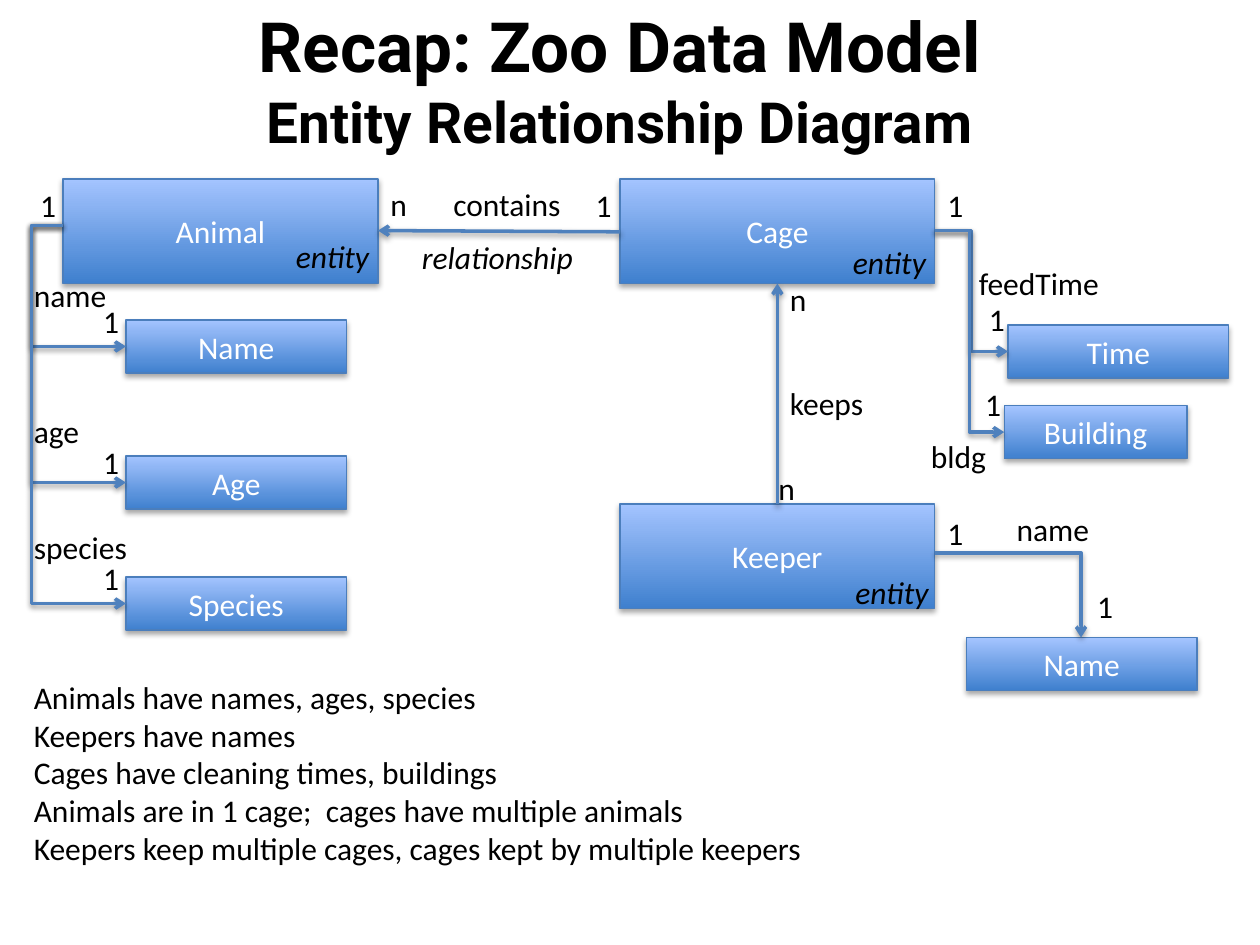
import pptx
import pptx.util
import pptx.dml.color
import pptx.enum.shapes
import pptx.enum.text
import pptx.oxml.ns
import lxml.etree

PX = 9144  # EMU per px, 100 px to the inch
BLACK, WHITE = "000000", "FFFFFF"
rgb = pptx.dml.color.RGBColor.from_string
qn = pptx.oxml.ns.qn


def add_shadow(effects, distance, opacity):
    """Put a soft downward shadow into an effect list."""
    shadow = lxml.etree.SubElement(effects, qn("a:outerShdw"), blurRad="40000",
                                   dist=str(distance), dir="5400000", rotWithShape="0")
    colour = lxml.etree.SubElement(shadow, qn("a:srgbClr"), val=BLACK)
    lxml.etree.SubElement(colour, qn("a:alpha"), val=str(opacity * 1000))


def set_text(shape, text, colour, size=18, font="Calibri", italic=False):
    """Write the text and format every run alike."""
    shape.text_frame.text = text
    for paragraph in shape.text_frame.paragraphs:
        for run in paragraph.runs:
            run.font.name = font
            run.font.size = pptx.util.Pt(size)
            run.font.italic = italic
            run.font.color.rgb = rgb(colour)


presentation = pptx.Presentation()
presentation.slide_width = 1000 * PX
presentation.slide_height = 750 * PX
slide = presentation.slides.add_slide(presentation.slide_layouts[6])
shapes = slide.shapes

# Title
title = shapes.add_textbox(42 * PX, 0, 900 * PX, 125 * PX)
title.text_frame.word_wrap = True
title.text_frame.vertical_anchor = pptx.enum.text.MSO_ANCHOR.MIDDLE
set_text(title, "Recap: Zoo Data Model\vEntity Relationship Diagram", BLACK, 39.6, "Roboto")
heading = title.text_frame.paragraphs[0]
heading.alignment = pptx.enum.text.PP_ALIGN.CENTER
for run in heading.runs:
    run.font.bold = True
heading.runs[1].font.size = pptx.util.Pt(32.4)

# Entity and attribute boxes: text, left, top, width, height
boxes = [
    ("Animal", 50, 142, 250, 83),
    ("Cage", 492, 142, 250, 83),
    ("Keeper", 492, 400, 250, 83),
    ("Name", 100, 254, 175, 42),
    ("Age", 100, 362, 175, 42),
    ("Species", 100, 458, 175, 42),
    ("Time", 800, 258, 175, 42),
    ("Building", 797, 322, 145, 42),
    ("Name", 767, 506, 183, 42),
]
for text, left, top, width, height in boxes:
    box = shapes.add_shape(pptx.enum.shapes.MSO_SHAPE.RECTANGLE,
                           left * PX, top * PX, width * PX, height * PX)
    box.fill.gradient()
    box.fill.gradient_angle = 90
    for stop, position, colour in zip(box.fill.gradient_stops, (0, 1), ("3F80CE", "A4C4FF")):
        stop.position = position
        stop.color.rgb = rgb(colour)
    box.line.color.rgb = rgb("4B7EBC")
    box.line.width = pptx.util.Pt(0.75)
    box.shadow.inherit = False
    add_shadow(box._element.spPr.find(qn("a:effectLst")), 23000, 35)
    box.text_frame.vertical_anchor = pptx.enum.text.MSO_ANCHOR.MIDDLE
    set_text(box, text, WHITE)
    box.text_frame.paragraphs[0].alignment = pptx.enum.text.PP_ALIGN.CENTER

# Arrows: preset, from x, from y, to x, to y, bend in percent of the width
arrows = [
    ("line", 492, 184, 300, 183, None),
    ("line", 617, 400, 617, 225, None),
    ("bentConnector2", 742, 439, 858, 506, None),
    ("bentConnector3", 742, 183, 800, 279, 50),
    ("bentConnector3", 742, 183, 797, 343, 50),
    ("bentConnector3", 50, 179, 100, 275, -50),
    ("bentConnector3", 50, 179, 100, 383, -50),
    ("bentConnector3", 50, 179, 100, 479, -50),
]
for preset, from_x, from_y, to_x, to_y, bend in arrows:
    kind = pptx.enum.shapes.MSO_CONNECTOR
    arrow = shapes.add_connector(kind.STRAIGHT if preset == "line" else kind.ELBOW,
                                 from_x * PX, from_y * PX, to_x * PX, to_y * PX)
    arrow.line.color.rgb = rgb("4F81BD")
    arrow.line.width = pptx.util.Pt(2)
    properties = arrow._element.spPr
    geometry = properties.find(qn("a:prstGeom"))
    geometry.set("prst", preset)
    if bend is not None:
        lxml.etree.SubElement(geometry.find(qn("a:avLst")), qn("a:gd"),
                              name="adj1", fmla=f"val {bend * 1000}")
    lxml.etree.SubElement(properties.find(qn("a:ln")), qn("a:tailEnd"), type="arrow")
    add_shadow(lxml.etree.SubElement(properties, qn("a:effectLst")), 20000, 38)

# Relationship names, multiplicities and italic kinds: text, left, top, width, italic
labels = [
    ("keeps", 617, 300, 79, False),
    ("contains", 350, 142, 106, False),
    ("name", 797, 400, 78, False),
    ("feedTime", 767, 205, 116, False),
    ("bldg", 729, 342, 64, False),
    ("name", 17, 214, 78, False),
    ("age", 17, 322, 57, False),
    ("species", 17, 414, 95, False),
    ("entity", 225, 183, 90, True),
    ("entity", 667, 188, 83, True),
    ("entity", 669, 450, 140, True),
    ("relationship", 325, 184, 158, True),
]
ones = [(22, 143), (463, 143), (742, 143), (72, 235), (72, 347), (72, 439),
        (775, 233), (772, 301), (742, 403), (861, 461)]
many = [(300, 142), (617, 217), (608, 367)]
labels += [("1", left, top, 33, False) for left, top in ones]
labels += [("n", left, top, 34, False) for left, top in many]
for text, left, top, width, italic in labels:
    label = shapes.add_textbox(left * PX, top * PX, width * PX, 40 * PX)
    label.text_frame.word_wrap = italic
    label.text_frame.auto_size = pptx.enum.text.MSO_AUTO_SIZE.SHAPE_TO_FIT_TEXT
    set_text(label, text, BLACK, italic=italic)

# Summary
summary = shapes.add_textbox(17 * PX, 533 * PX, 843 * PX, 162 * PX)
summary.text_frame.word_wrap = True
set_text(summary, "\n".join([
    "Animals have names, ages, species",
    "Keepers have names",
    "Cages have cleaning times, buildings",
    "Animals are in 1 cage;  cages have multiple animals",
    "Keepers keep multiple cages, cages kept by multiple keepers",
]), BLACK)

presentation.save("out.pptx")
